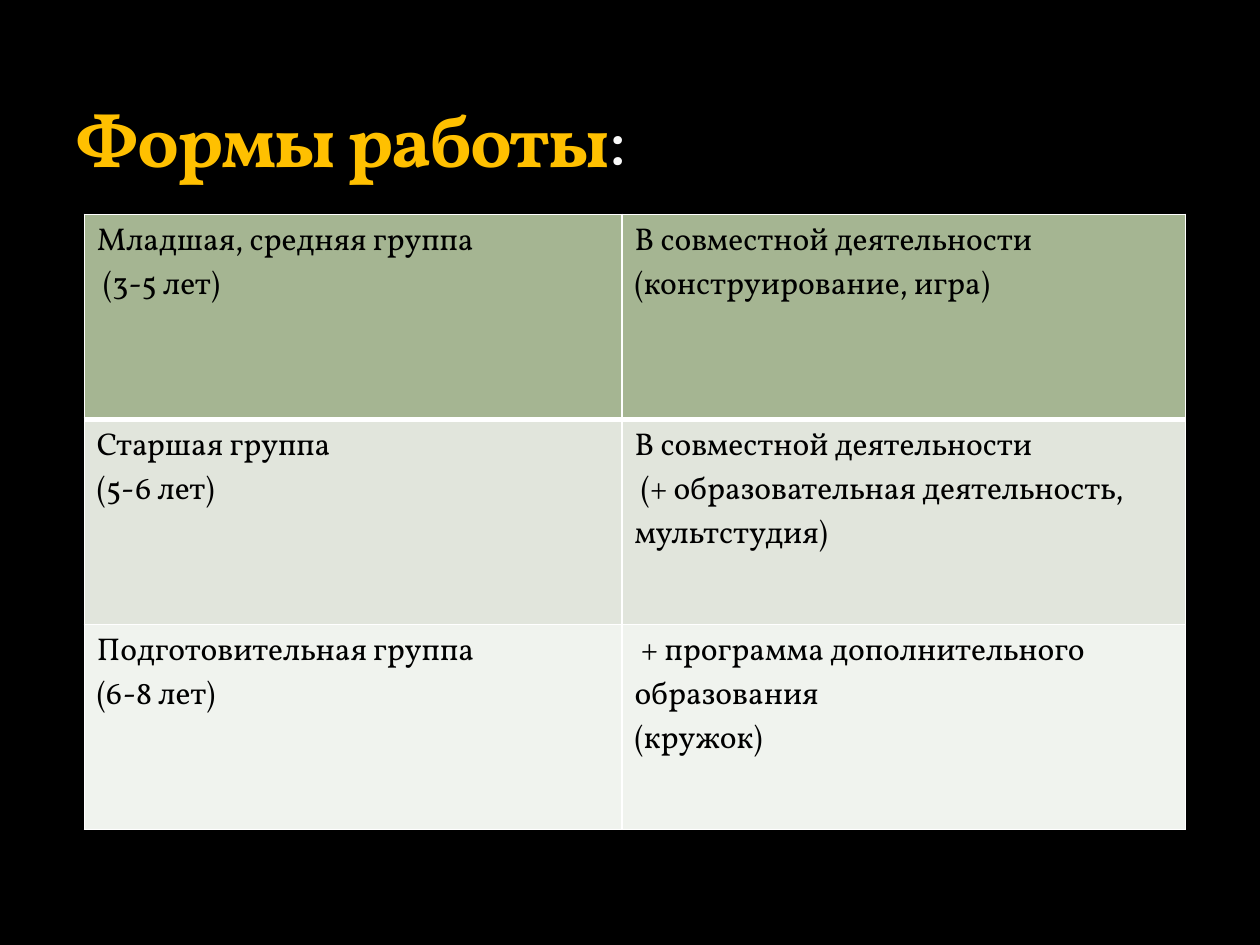
from lxml.etree import SubElement
from pptx import Presentation
from pptx.dml.color import RGBColor
from pptx.enum.text import MSO_ANCHOR, MSO_AUTO_SIZE, PP_ALIGN
from pptx.oxml import parse_xml
from pptx.oxml.ns import nsdecls
from pptx.util import Cm, Pt

FONT = "Vollkorn"
GROUPS = [
    ("A5B592", "Младшая, средняя группа\n (3-5 лет)",
     "В совместной деятельности\n(конструирование, игра)"),
    ("E1E5DC", "Старшая группа\n(5-6 лет)",
     "В совместной деятельности\n (+ образовательная деятельность, мультстудия)"),
    ("F0F3EE", "Подготовительная группа\n(6-8 лет)",
     " + программа дополнительного образования\n(кружок)"),
]


def paint(target, color):
    """Give a fill a solid colour from a hex string."""
    target.solid()
    target.fore_color.rgb = RGBColor.from_string(color)


def style_run(run, size, color, bold=False):
    """Set the font, size, colour and weight of a run."""
    run.font.name = FONT
    run.font.size = Pt(size)
    run.font.bold = bold
    paint(run.font.fill, color)


def set_borders(cell, bottom_width):
    """Draw white lines around a cell, with a bottom line of its own width."""
    properties = cell._tc.get_or_add_tcPr()
    widths = {"lnL": 1, "lnR": 1, "lnT": 1, "lnB": bottom_width}
    for position, (side, width) in enumerate(widths.items()):
        border = parse_xml(f'<a:{side} {nsdecls("a")} w="{Pt(width)}"/>')
        namespace = border.nsmap["a"]
        solid = SubElement(border, f"{{{namespace}}}solidFill")
        SubElement(solid, f"{{{namespace}}}srgbClr", val="FFFFFF")
        properties.insert(position, border)


def add_heading(slide, left, top, width, height):
    """Place the slide title in the given box."""
    heading = slide.shapes.title
    heading.left, heading.top, heading.width, heading.height = left, top, width, height
    frame = heading.text_frame
    frame.auto_size = MSO_AUTO_SIZE.NONE
    frame.vertical_anchor = MSO_ANCHOR.BOTTOM
    frame.text = "Формы работы"
    paragraph = frame.paragraphs[0]
    paragraph.alignment = PP_ALIGN.LEFT
    paragraph.add_run().text = ":"
    words, colon = paragraph.runs
    style_run(words, 42, "FFC000", bold=True)
    style_run(colon, 42, "F9F9F9")
    for run in paragraph.runs:
        run._r.get_or_add_rPr().set("spc", "-100")


def add_group_table(slide, left, top, width, height):
    """Place the table of age groups and forms of work in the given box."""
    table = slide.shapes.add_table(len(GROUPS), 2, left, top, width, height).table
    table.columns[0].width = Cm(10.84)
    table.columns[1].width = width - Cm(10.84)
    for index, (color, *texts) in enumerate(GROUPS):
        for cell, text in zip(table.rows[index].cells, texts):
            cell.text_frame.text = text
            for paragraph in cell.text_frame.paragraphs:
                style_run(paragraph.runs[0], 18, "000000")
            paint(cell.fill, color)
            set_borders(cell, bottom_width=3 if index == 0 else 1)


def main():
    """Build the slide and save it."""
    deck = Presentation()
    deck.slide_width, deck.slide_height = Cm(25.4), Cm(19.05)
    slide = deck.slides.add_slide(deck.slide_layouts[5])
    paint(slide.background.fill, "000000")
    add_heading(slide, Cm(1.27), Cm(0.43), Cm(22.86), Cm(3.38))
    add_group_table(slide, Cm(1.7), Cm(4.32), Cm(22.2), Cm(12.4))
    deck.save("out.pptx")


if __name__ == "__main__":
    main()
